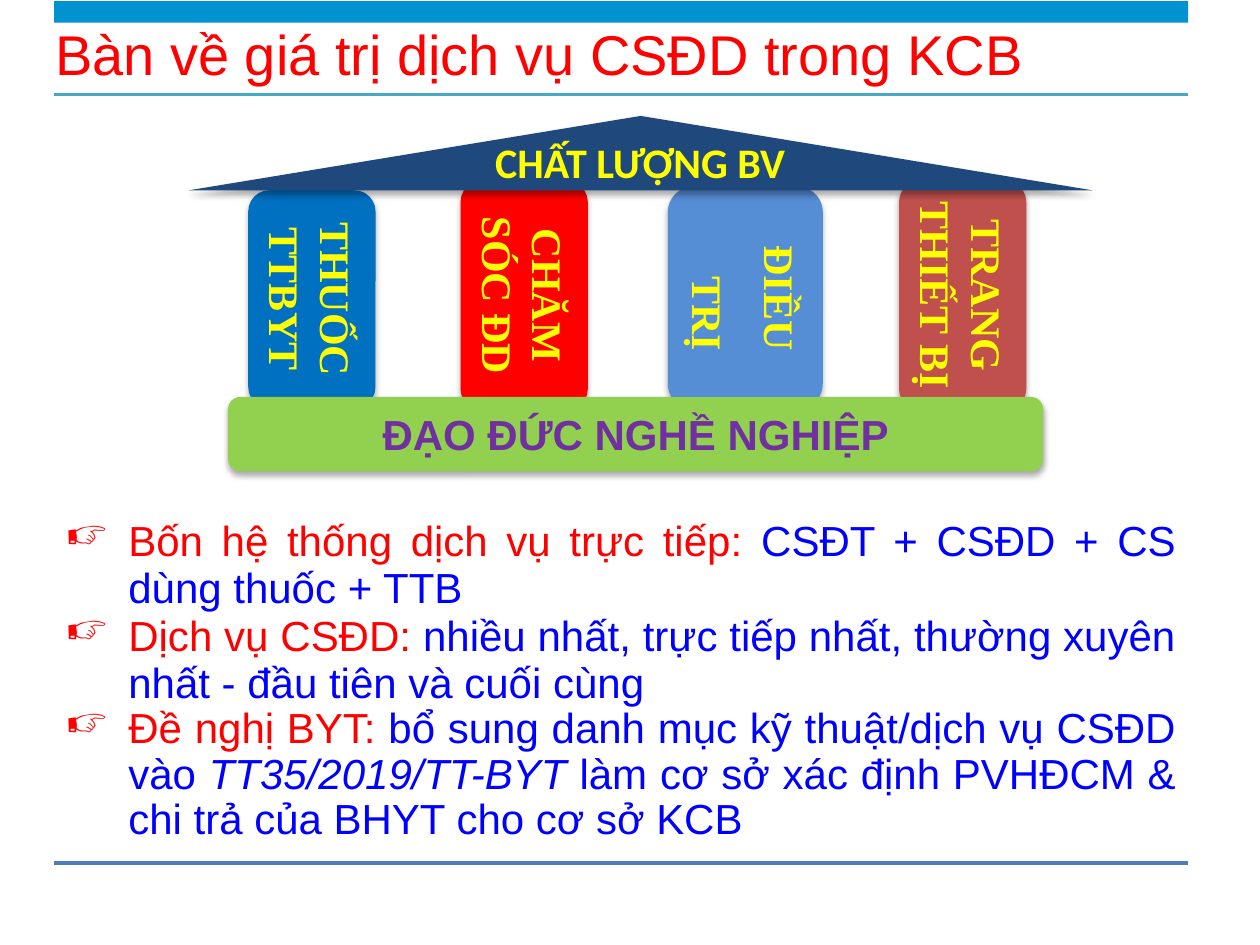
import pptx
import pptx.dml.color
import pptx.enum.shapes
import pptx.enum.text
import pptx.oxml
import pptx.oxml.ns
import pptx.oxml.xmlchemy
import pptx.util

THEME = {
    "band": "0092D1", "title_rule": "46AAC5", "footer_rule": "4B7EBC",
    "roof": "1F497D", "base": "92D050", "paper": "FFFFFF",
    "medicine": "0070C0", "nursing": "FF0000", "treatment": "558ED5", "equipment": "C0504D",
    "on_dark": "FFFF00", "on_base": "7030A0", "lead": "FF0000", "detail": "0000FF",
    "sans": "Arial", "serif": "Times New Roman", "roof_font": "Calibri",
    "title_size": 32, "text_size": 24, "rule_width": 2.25,
}
PRESET = pptx.enum.shapes.MSO_SHAPE
ALIGN = pptx.enum.text.PP_ALIGN
ANCHOR = pptx.enum.text.MSO_ANCHOR
SHADOW = (
    f'<a:outerShdw {pptx.oxml.ns.nsdecls("a")} blurRad="44450" dist="27940" dir="5400000" '
    'rotWithShape="0"><a:srgbClr val="000000"><a:alpha val="32000"/></a:srgbClr></a:outerShdw>'
)

# The slide is a grid of 100 columns by 75 rows; every length counts grid cells.
COLUMNS, ROWS = 100, 75
deck = pptx.Presentation()
deck.slide_width = pptx.util.Inches(10)
CELL = deck.slide_width // COLUMNS
deck.slide_height = ROWS * CELL
slide = deck.slides.add_slide(deck.slide_layouts[6])


def add_block(preset, area, fill, shadow=False):
    block = slide.shapes.add_shape(preset, *(round(cells * CELL) for cells in area))
    block.fill.solid()
    block.fill.fore_color.rgb = pptx.dml.color.RGBColor.from_string(THEME[fill])
    block.line.fill.background()
    block.shadow.inherit = False
    if shadow:
        effects = block._element.spPr.find(pptx.oxml.ns.qn("a:effectLst"))
        effects.append(pptx.oxml.parse_xml(SHADOW))
    return block


def write(holder, paragraphs, font="sans", size="text_size", color="lead", bold=None,
          align=ALIGN.LEFT, anchor=ANCHOR.TOP, spacing=None, gap=0):
    """Fill a shape; a paragraph is a list of (text, colour or None, italic) runs."""
    frame = holder.text_frame
    frame.word_wrap = True
    frame.vertical_anchor = anchor
    for index, runs in enumerate(paragraphs):
        paragraph = frame.add_paragraph() if index else frame.paragraphs[0]
        paragraph.alignment = align
        if spacing:
            paragraph.line_spacing = spacing
        if index and gap:
            paragraph.space_before = pptx.util.Pt(gap)
        for text, run_color, italic in runs:
            run = paragraph.add_run()
            run.text = text
            run.font.name = THEME[font]
            run.font.size = pptx.util.Pt(THEME[size])
            run.font.bold = bold
            run.font.italic = italic
            run.font.color.rgb = pptx.dml.color.RGBColor.from_string(THEME[run_color or color])
    return frame.paragraphs


# Band and rules
add_block(PRESET.RECTANGLE, (4.3, 0.1, 90, 1.7), "band")
for row, rule_color in ((7.5, "title_rule"), (68.5, "footer_rule")):
    rule = slide.shapes.add_connector(
        pptx.enum.shapes.MSO_CONNECTOR.STRAIGHT,
        *(round(cells * CELL) for cells in (4.3, row, 94.3, row)))
    rule.line.color.rgb = pptx.dml.color.RGBColor.from_string(THEME[rule_color])
    rule.line.width = pptx.util.Pt(THEME["rule_width"])
    rule._element.spPr.append(pptx.oxml.xmlchemy.OxmlElement("a:effectLst"))

# Pillars lie on their side before a quarter turn: centre column, centre row, length, breadth
pillars = (
    (["THUỐC TTBYT"], "medicine", 24.75, 23.75, 17.3, 10.1),
    (["CHĂM SÓC ĐD"], "nursing", 41.6, 23.45, 18.2, 10.1),
    (["ĐIỀU", "TRỊ"], "treatment", 59.15, 23.65, 17.7, 12.3),
    (["TRANG THIẾT BỊ"], "equipment", 76.4, 23.45, 18.2, 10.1),
)
for lines, fill, column, row, length, breadth in pillars:
    pillar = add_block(PRESET.ROUNDED_RECTANGLE,
                       (column - length / 2, row - breadth / 2, length, breadth), fill, True)
    pillar.rotation = 90
    pillar_lines = write(pillar, [[(line, None, None)] for line in lines], font="serif",
                         color="on_dark", bold=True, align=ALIGN.CENTER,
                         anchor=ANCHOR.MIDDLE, gap=12)
    if len(lines) > 1:
        pillar_lines[-1]._p.get_or_add_pPr().set("marL", str(round(2.5 * CELL)))

# Roof and base, with their captions
add_block(PRESET.ISOSCELES_TRIANGLE, (15, 9.2, 71.7, 5.9), "roof", True)
add_block(PRESET.ROUNDED_RECTANGLE, (18.1, 31.5, 64.7, 5.9), "base", True)
captions = (
    ("CHẤT LƯỢNG BV", (26.7, 10.8, 48.2, 4.6),
     dict(font="roof_font", color="on_dark", bold=True, align=ALIGN.CENTER, spacing=0.9)),
    ("ĐẠO ĐỨC NGHỀ NGHIỆP", (19.6, 31.9, 61.7, 4.2),
     dict(color="on_base", bold=True, align=ALIGN.CENTER)),
    ("Bàn về giá trị dịch vụ CSĐD trong KCB", (3.4, 2.9, 96.4, 6.6),
     dict(size="title_size", spacing=pptx.util.Pt(25))),
)
for text, area, text_format in captions:
    caption = slide.shapes.add_textbox(*(round(cells * CELL) for cells in area))
    write(caption, [[(text, None, None)]], **text_format)

# Remarks
remarks = [
    [("Bốn hệ thống dịch vụ trực tiếp: ", "lead", None),
     ("CSĐT + CSĐD + CS dùng thuốc + TTB", None, None)],
    [("Dịch vụ CSĐD: ", "lead", None),
     ("nhiều nhất, trực tiếp nhất, thường xuyên nhất - đầu tiên và cuối cùng", None, None)],
    [("Đề nghị BYT: ", "lead", None),
     ("bổ sung danh mục kỹ thuật/dịch vụ CSĐD vào ", None, None),
     ("TT35/2019/TT-BYT ", None, True),
     ("làm cơ sở xác định PVHĐCM & chi trả của BHYT cho cơ sở KCB", None, None)],
]
remark_box = add_block(PRESET.RECTANGLE, (4.2, 40.6, 90.1, 27.5), "paper")
remark_lines = write(remark_box, remarks, color="detail", align=ALIGN.JUSTIFY,
                     spacing=pptx.util.Pt(27))
remark_lines[-1].line_spacing = pptx.util.Pt(26)
for remark in remark_lines:
    properties = remark._p.get_or_add_pPr()
    properties.set("marL", str(5 * CELL))
    properties.set("indent", str(-5 * CELL))
    bullet = pptx.oxml.xmlchemy.OxmlElement("a:buChar")
    bullet.set("char", "☞")
    properties.append(bullet)

deck.save("out.pptx")
